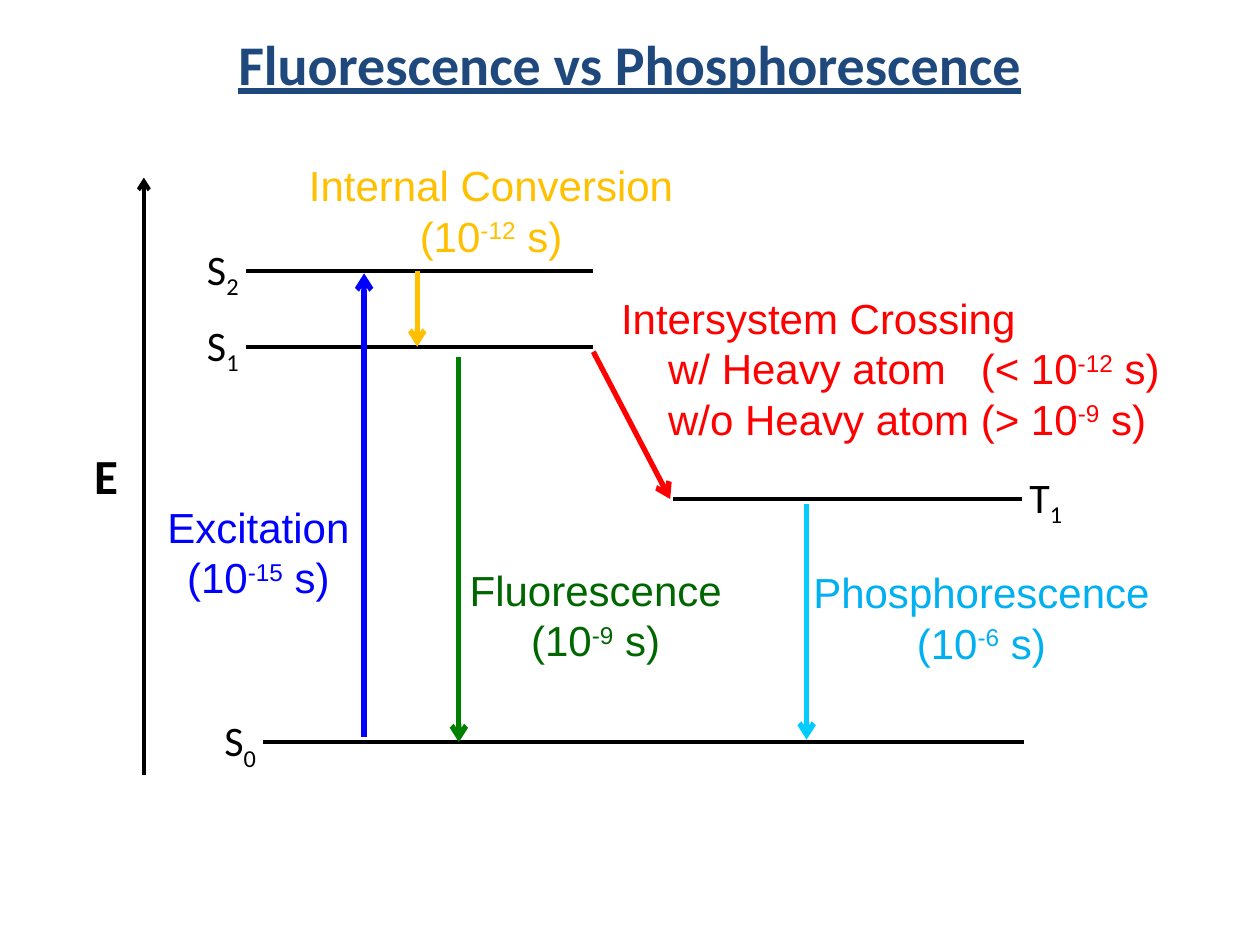
from lxml.etree import SubElement
from pptx import Presentation
from pptx.dml.color import RGBColor
from pptx.enum.shapes import MSO_CONNECTOR
from pptx.enum.text import MSO_ANCHOR, PP_ALIGN
from pptx.oxml.ns import qn
from pptx.util import Cm, Pt

BLACK = "000000"
SUB, SUPER = -25000, 30000


def add_line(start, end, color, width, arrow=False):
    """Draw a straight line; an arrow points at its end."""
    line = slide.shapes.add_connector(
        MSO_CONNECTOR.STRAIGHT, *(Cm(v) for v in start + end))
    line.line.color.rgb = RGBColor.from_string(color)
    line.line.width = Pt(width)
    if arrow:
        SubElement(line.line._get_or_add_ln(), qn("a:tailEnd"), type="arrow")
    SubElement(line._element.spPr, qn("a:effectLst"))


def add_text(box, lines, color, font="Arial", size=24, align=PP_ALIGN.CENTER, wrap=False):
    """Add a text box; each line is a list of (text, baseline shift) runs."""
    frame = slide.shapes.add_textbox(*(Cm(v) for v in box)).text_frame
    frame.word_wrap = wrap
    for i, line in enumerate(lines):
        paragraph = frame.paragraphs[0] if i == 0 else frame.add_paragraph()
        paragraph.alignment = align
        for text, shift in line:
            run = paragraph.add_run()
            run.text = text
            run.font.name = font
            run.font.size = Pt(size)
            run.font.color.rgb = RGBColor.from_string(color)
            if shift:
                run.font._element.set("baseline", str(shift))
    return frame


prs = Presentation()
prs.slide_width, prs.slide_height = Cm(25.4), Cm(19.05)
slide = prs.slides.add_slide(prs.slide_layouts[6])

title = add_text((1.27, 0, 22.86, 2.54), [[("Fluorescence vs Phosphorescence", 0)]],
                 "1F497D", "Calibri", 32, wrap=True)
title.vertical_anchor = MSO_ANCHOR.MIDDLE
title_font = title.paragraphs[0].runs[0].font
title_font.bold = title_font.underline = True

# Energy axis
add_line((2.9, 15.62), (2.9, 3.58), BLACK, 2.25, arrow=True)
energy = add_text((1.65, 8.86, 1.17, 1.45), [[("E", 0)]], BLACK, "Calibri", 28,
                  PP_ALIGN.LEFT, wrap=True)
energy.paragraphs[0].runs[0].font.bold = True

# Energy levels: state, number, line from, line to, height, label left, label width
levels = [
    ("S", "0", 5.31, 20.65, 14.96, 4.01, 1.4),
    ("S", "1", 4.95, 11.96, 6.99, 3.56, 1.5),
    ("S", "2", 4.95, 11.96, 5.46, 3.56, 1.5),
    ("T", "1", 13.56, 20.6, 10.06, 20.5, 1.22),
]
for state, number, left, right, y, label_left, label_width in levels:
    add_line((left, y), (right, y), BLACK, 2.25)
    singlet = state == "S"
    add_text((label_left, y - 0.68, label_width, 1.27), [[(state, 0), (number, SUB)]],
             BLACK, "Calibri", align=PP_ALIGN.RIGHT if singlet else PP_ALIGN.LEFT,
             wrap=singlet)

# Transitions: name, exponent, text colour, text box, arrow colour, arrow x, from y, to y
transitions = [
    ("Excitation", "-15", "0000FF", (3.1, 9.98, 4.22, 2.31), "0000FF", 7.34, 14.86, 5.51),
    ("Fluorescence", "-9", "006600", (9.19, 11.25, 5.64, 2.31), "008000", 9.25, 7.19, 14.96),
    ("Phosphorescence", "-6", "00B0F0", (16.1, 11.3, 7.37, 2.31), "00CCFF", 16.26, 10.16, 14.91),
    ("Internal Conversion", "-12", "FFC000", (5.94, 3.1, 7.92, 2.31), "FFC000", 8.41, 5.46, 6.99),
]
for name, exponent, color, box, arrow_color, x, y_from, y_to in transitions:
    add_line((x, y_from), (x, y_to), arrow_color, 3, arrow=True)
    add_text(box, [[(name, 0)], [("(10", 0), (exponent, SUPER), (" s)", 0)]], color)

# Intersystem crossing
add_line((11.96, 7.09), (13.51, 10.06), "FF0000", 3, arrow=True)
crossing = add_text(
    (12.27, 5.77, 11.86, 3.33),
    [[("Intersystem Crossing", 0)],
     [("w/ Heavy atom", 0), (" ", 0), ("(< 10", 0), ("-12", SUPER), (" s)", 0)],
     [("w/o Heavy atom (> 10", 0), ("-9", SUPER), (" s)", 0)]],
    "FF0000", align=PP_ALIGN.LEFT, wrap=True)
for case in crossing.paragraphs[1:]:
    case._p.get_or_add_pPr().set("marL", str(Cm(0.95)))
# A widened space lines up the two times
crossing.paragraphs[1].runs[1].font._element.set("spc", "1330")

prs.save("out.pptx")
